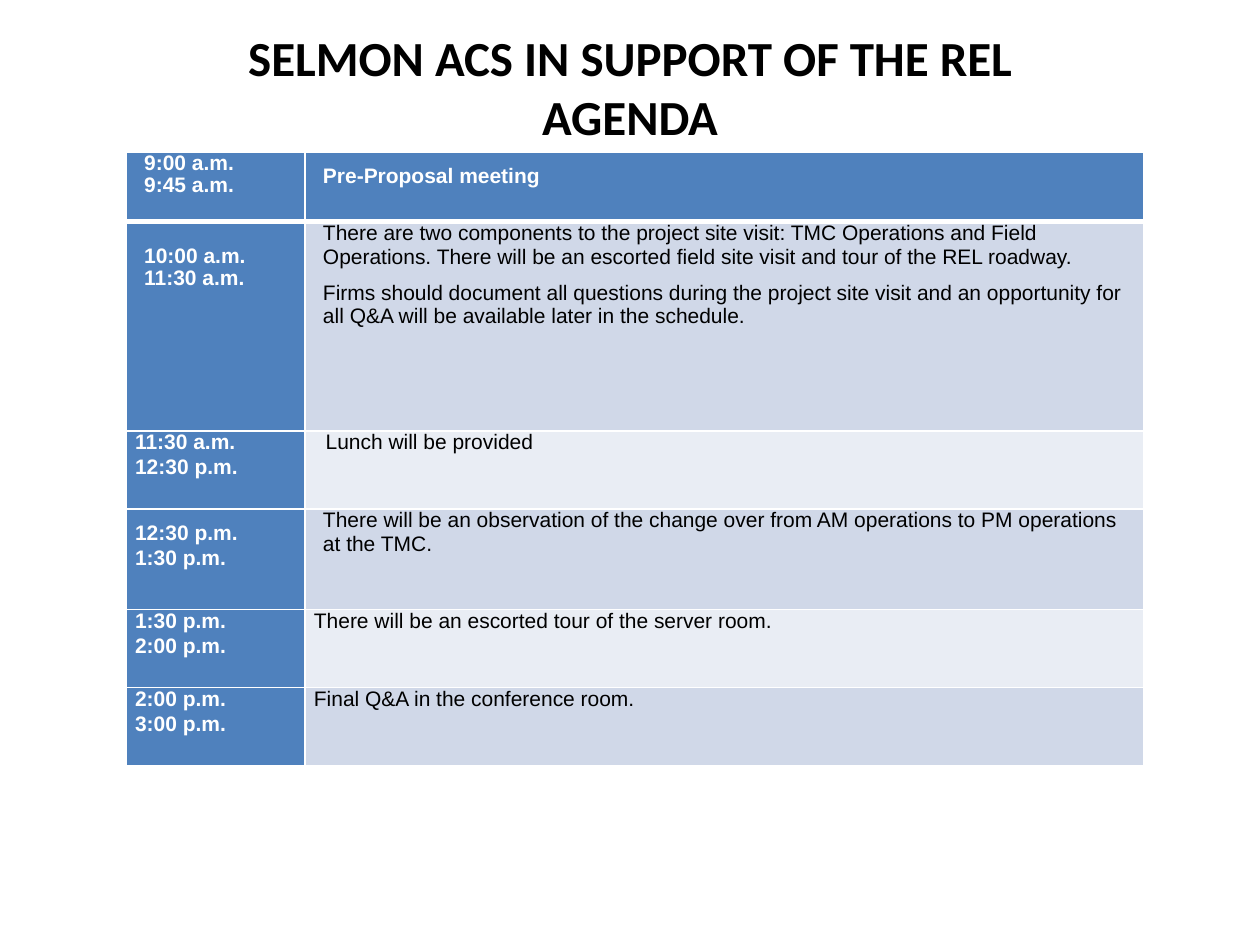
"""Build the site visit agenda slide: a title above a timetable."""
from dataclasses import dataclass
from typing import Optional

from lxml import etree
from pptx import Presentation
from pptx.dml.color import RGBColor
from pptx.enum import text
from pptx.oxml import ns
from pptx.util import Pt


@dataclass(frozen=True)
class Theme:
    """Colours, fonts and type sizes."""
    accent: str = "4F81BD"
    bands: tuple[str, str] = ("D0D8E8", "E9EDF4")
    light: str = "FFFFFF"
    dark: str = "000000"
    title_font: str = "Calibri"
    body_font: str = "Arial"
    title_size: float = 28
    body_size: float = 12


@dataclass(frozen=True)
class Entry:
    """Text of one cell with its spacing in points."""
    lines: tuple[str, ...]
    top: float = 0
    indent: float = 0
    gap: float = 0.5
    leading: Optional[float] = None


@dataclass(frozen=True)
class Slot:
    """One row of the agenda."""
    height: float
    time: Entry
    topic: Entry


THEME = Theme()
INSET = 5.2
COLUMNS = (102.2, 479.5)
SLOTS = (
    Slot(39.6, Entry(("9:00 a.m.", "9:45 a.m."), indent=INSET, gap=0, leading=12.6),
         Entry(("Pre-Proposal meeting",), top=6.9, indent=INSET)),
    Slot(119.5, Entry(("10:00 a.m.", "11:30 a.m."), top=13.8, indent=INSET, gap=0, leading=12.6),
         Entry(("There are two components to the project site visit: TMC Operations and Field "
                "Operations. There will be an escorted field site visit and tour of the REL roadway.",
                "Firms should document all questions during the project site visit and an "
                "opportunity for all Q&A will be available later in the schedule."),
               indent=INSET, gap=7)),
    Slot(44.6, Entry(("11:30 a.m.", "12:30 p.m.")),
         Entry(("Lunch will be provided",), indent=6.7)),
    Slot(57.6, Entry(("12:30 p.m.", "1:30 p.m."), top=7.4),
         Entry(("There will be an observation of the change over from AM operations to PM "
                "operations at the TMC.",), indent=INSET)),
    Slot(44.6, Entry(("1:30 p.m.", "2:00 p.m.")),
         Entry(("There will be an escorted tour of the server room.",))),
    Slot(44.6, Entry(("2:00 p.m.", "3:00 p.m.")),
         Entry(("Final Q&A in the conference room.",))),
)


def style_run(r, font: str, size: float, color: str, bold: bool) -> None:
    """Set the font of a run."""
    r.font.name = font
    r.font.size = Pt(size)
    r.font.bold = bold
    r.font.color.rgb = RGBColor.from_string(color)


def add_text_shadow(r) -> None:
    """Give a run a soft shadow below its letters."""
    effects = etree.Element(ns.qn("a:effectLst"))
    shadow = etree.SubElement(effects, ns.qn("a:outerShdw"), blurRad=str(Pt(3)),
                              dist=str(Pt(3)), dir="2700000", algn="tl")
    color = etree.SubElement(shadow, ns.qn("a:srgbClr"), val=THEME.dark)
    etree.SubElement(color, ns.qn("a:alpha"), val="43000")
    r.font.fill._xPr.find(ns.qn("a:solidFill")).addnext(effects)


def set_border(cell, side: str, width: float) -> None:
    """Add a light border to one side of a cell."""
    ln = etree.SubElement(cell._tc.get_or_add_tcPr(), ns.qn(f"a:ln{side}"), w=str(Pt(width)))
    fill = etree.SubElement(ln, ns.qn("a:solidFill"))
    etree.SubElement(fill, ns.qn("a:srgbClr"), val=THEME.light)


def fill_cell(cell, entry: Entry, row: int, fill: str, color: str, bold: bool) -> None:
    """Write and format one cell."""
    widths = {"L": 1, "R": 1, "T": 3 if row == 1 else 1, "B": 3 if row == 0 else 1}
    for side, width in widths.items():
        set_border(cell, side, width)
    cell.fill.solid()
    cell.fill.fore_color.rgb = RGBColor.from_string(fill)
    cell.margin_left = cell.margin_right = Pt(INSET)
    cell.margin_top, cell.margin_bottom = Pt(entry.top), Pt(0)
    tf = cell.text_frame
    tf.text = "\n".join(entry.lines)
    for i, p in enumerate(tf.paragraphs):
        p._p.get_or_add_pPr().set("marL", str(Pt(entry.indent)))
        if i:
            p.space_before = Pt(entry.gap)
        if entry.leading:
            p.line_spacing = Pt(entry.leading)
        style_run(p.runs[0], THEME.body_font, THEME.body_size, color, bold)


def add_title(s, lines: tuple[str, ...]) -> None:
    """Place and format the slide title."""
    sp = s.shapes.title
    sp.left, sp.top, sp.width, sp.height = Pt(15.1), Pt(12.2), Pt(689.8), Pt(74.9)
    tf = sp.text_frame
    tf.text = "\n".join(lines)
    tf.word_wrap = True
    tf.auto_size = text.MSO_AUTO_SIZE.SHAPE_TO_FIT_TEXT
    tf.vertical_anchor = text.MSO_ANCHOR.TOP
    for p in tf.paragraphs:
        p.alignment = text.PP_ALIGN.CENTER
        style_run(p.runs[0], THEME.title_font, THEME.title_size, THEME.dark, True)
        add_text_shadow(p.runs[0])


def add_agenda(s, slots: tuple[Slot, ...]) -> None:
    """Draw the timetable."""
    table = s.shapes.add_table(len(slots), len(COLUMNS), Pt(72), Pt(87.1), Pt(sum(COLUMNS)),
                               Pt(sum(slot.height for slot in slots))).table
    table.first_col = True
    for column, width in zip(table.columns, COLUMNS):
        column.width = Pt(width)
    for i, slot in enumerate(slots):
        table.rows[i].height = Pt(slot.height)
        header = i == 0
        fill_cell(table.cell(i, 0), slot.time, i, THEME.accent, THEME.light, True)
        fill_cell(table.cell(i, 1), slot.topic, i,
                  THEME.accent if header else THEME.bands[(i - 1) % 2],
                  THEME.light if header else THEME.dark, header)


def main() -> None:
    """Create and save the presentation."""
    prs = Presentation()
    prs.slide_width, prs.slide_height = Pt(720), Pt(540)
    s = prs.slides.add_slide(prs.slide_layouts[5])
    add_title(s, ("SELMON ACS IN SUPPORT OF THE REL", "AGENDA"))
    add_agenda(s, SLOTS)
    prs.save("out.pptx")


if __name__ == "__main__":
    main()
